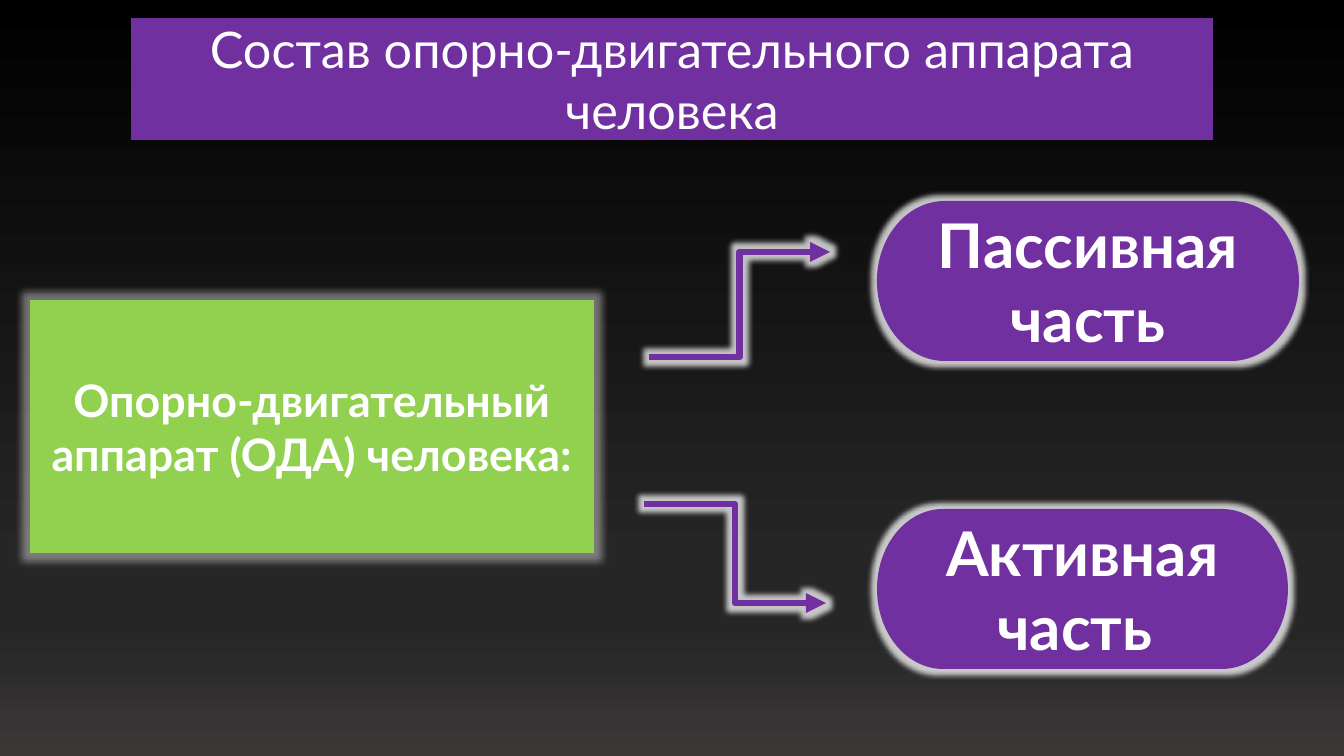
import pptx
import pptx.util
import pptx.oxml
import pptx.oxml.ns
import pptx.dml.color
import pptx.enum.shapes
import pptx.enum.text

RGB = pptx.dml.color.RGBColor
SHAPE = pptx.enum.shapes.MSO_SHAPE
PURPLE = RGB(0x70, 0x30, 0xA0)
GREEN = RGB(0x92, 0xD0, 0x50)
WHITE = RGB(0xFF, 0xFF, 0xFF)
BLACK = RGB(0x00, 0x00, 0x00)
CHARCOAL = RGB(0x26, 0x26, 0x26)
WARM_GREY = RGB(0x3B, 0x38, 0x38)

EMU_PER_PX = 914400 / 100.8
WIDTH, HEIGHT = 1344, 756
NS = pptx.oxml.ns.nsdecls("a")


def px(n):
    return pptx.util.Emu(round(n * EMU_PER_PX))


class SlideBuilder:
    font = "Lato"

    def __init__(self, prs):
        self.slide = prs.slides.add_slide(prs.slide_layouts[6])

    def background(self, stops):
        """Fill from top to bottom with (percent, colour) stops."""
        fill = self.slide.background.fill
        fill.gradient()
        fill.gradient_angle = 270
        gs_lst = fill.gradient_stops[0]._gs.getparent()
        for gs in list(gs_lst):
            gs_lst.remove(gs)
        for percent, color in stops:
            gs_lst.append(pptx.oxml.parse_xml(
                f'<a:gs {NS} pos="{percent * 1000}">'
                f'<a:srgbClr val="{color}"/></a:gs>'))

    def glow(self, sp, radius, alpha):
        """Put a white glow, radius in points and alpha in percent, on a shape."""
        sp_pr = sp._element.spPr
        for old in sp_pr.findall(pptx.oxml.ns.qn("a:effectLst")):
            sp_pr.remove(old)
        sp_pr.append(pptx.oxml.parse_xml(
            f'<a:effectLst {NS}><a:glow rad="{pptx.util.Pt(radius)}">'
            f'<a:srgbClr val="{WHITE}"><a:alpha val="{alpha * 1000}"/></a:srgbClr>'
            f'</a:glow></a:effectLst>'))

    def box(self, kind, x, y, w, h, color, lines, size, bold=True, glow=None):
        sp = self.slide.shapes.add_shape(kind, px(x), px(y), px(w), px(h))
        sp.shadow.inherit = False
        sp.fill.solid()
        sp.fill.fore_color.rgb = color
        sp.line.fill.background()
        if glow:
            self.glow(sp, *glow)
        tf = sp.text_frame
        tf.word_wrap = True
        tf.vertical_anchor = pptx.enum.text.MSO_ANCHOR.MIDDLE
        tf.text = "\n".join(lines)
        for p in tf.paragraphs:
            p.alignment = pptx.enum.text.PP_ALIGN.CENTER
            p.font.name = self.font
            p.font.size = pptx.util.Pt(size)
            p.font.bold = bold
            p.font.color.rgb = WHITE

    def elbow_arrow(self, x1, y1, x2, y2, glow):
        sp = self.slide.shapes.add_connector(
            pptx.enum.shapes.MSO_CONNECTOR.ELBOW, px(x1), px(y1), px(x2), px(y2))
        sp.line.color.rgb = PURPLE
        sp.line.width = pptx.util.Pt(4.75)
        sp.line._get_or_add_ln().append(
            pptx.oxml.parse_xml(f'<a:tailEnd {NS} type="triangle"/>'))
        self.glow(sp, *glow)


def main():
    prs = pptx.Presentation()
    prs.slide_width, prs.slide_height = px(WIDTH), px(HEIGHT)
    s = SlideBuilder(prs)
    s.background([(0, BLACK), (74, CHARCOAL), (83, CHARCOAL), (100, WARM_GREY)])

    s.box(SHAPE.FLOWCHART_PROCESS, 131, 18, 1082, 122, PURPLE,
          ["Состав опорно-двигательного аппарата человека"], 36, bold=False)
    s.box(SHAPE.FLOWCHART_PROCESS, 30, 300, 564, 253, GREEN,
          ["Опорно-двигательный аппарат (ОДА) человека:"], 32, glow=(11, 40))

    bright = (8, 75)
    for y, w, lines in ((201, 422, ["Пассивная", "часть"]),
                        (509, 411, ["Активная часть "])):
        s.box(SHAPE.FLOWCHART_TERMINATOR, 877, y, w, 160, PURPLE, lines, 44, glow=bright)
    s.elbow_arrow(649, 357, 830, 252, bright)
    s.elbow_arrow(644, 504, 826, 603, bright)

    prs.save("out.pptx")


if __name__ == "__main__":
    main()
